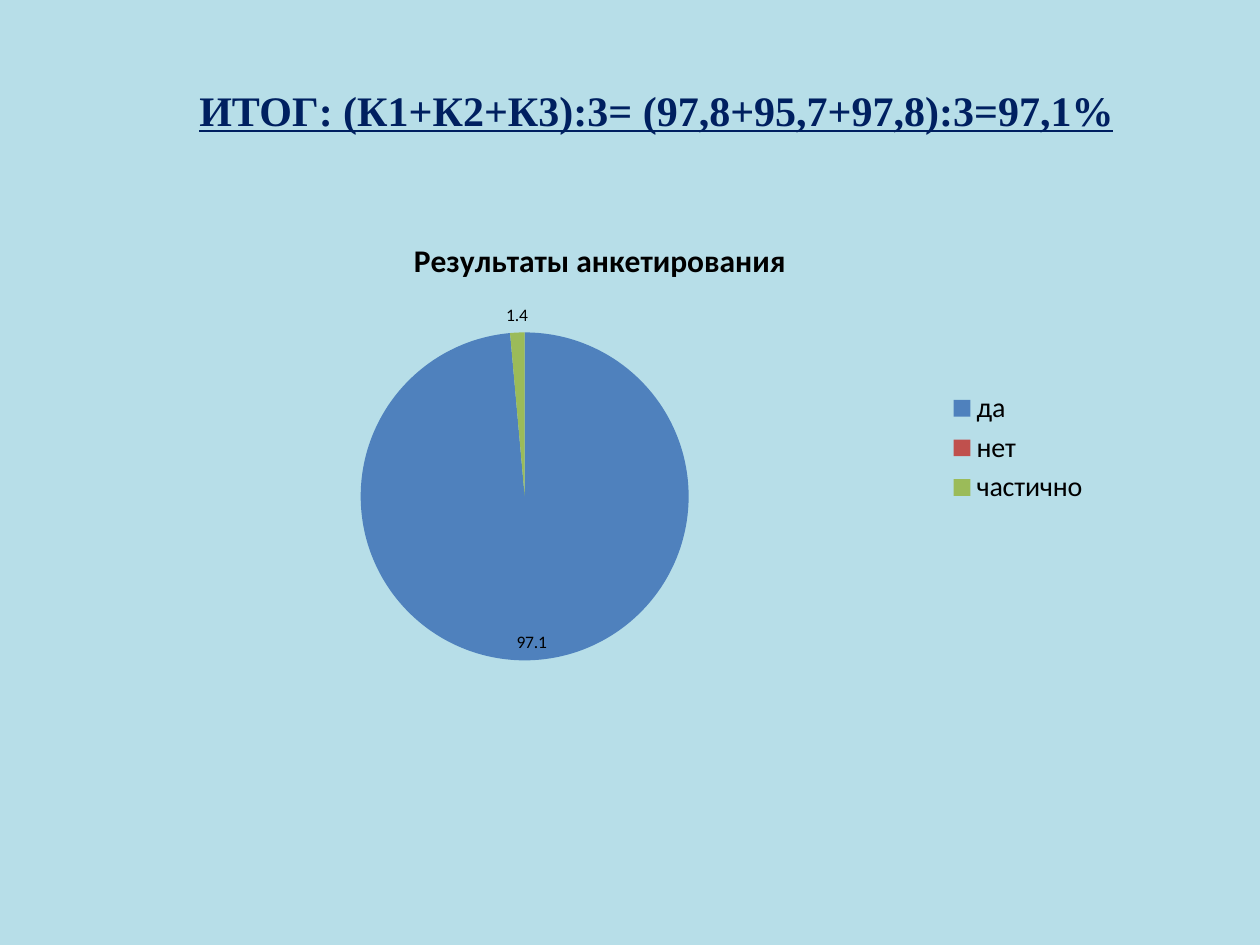
from dataclasses import dataclass

from lxml.etree import SubElement
from pptx import Presentation
from pptx.chart.data import CategoryChartData
from pptx.dml.color import RGBColor
from pptx.enum.chart import XL_CHART_TYPE as ChartType
from pptx.enum.chart import XL_LABEL_POSITION as LabelPosition
from pptx.enum.chart import XL_LEGEND_POSITION as LegendPosition
from pptx.enum.text import MSO_ANCHOR as Anchor
from pptx.enum.text import PP_ALIGN as Align
from pptx.oxml.ns import qn
from pptx.util import Inches, Pt

PX = Inches(1) // 126


@dataclass(frozen=True)
class Theme:
    background: str = "B7DEE8"
    heading: str = "002060"
    text: str = "000000"
    slices: tuple = ("4F81BD", "C0504D", "9BBB59")
    heading_face: str = "Times New Roman"
    chart_face: str = "Calibri"
    heading_size: int = 24
    chart_title_size: int = 18
    legend_size: int = 16
    label_size: int = 10


THEME = Theme()
ANSWERS = {"да": 97.1, "нет": 0, "частично": 1.4}


def px(*lengths):
    return [length * PX for length in lengths]


def set_font(font, face, size, color, bold=False):
    font.name = face
    font.size = Pt(size)
    font.bold = bold
    font.color.rgb = RGBColor.from_string(color)


def add_heading(page, text, place):
    frame = page.shapes.add_textbox(*px(*place)).text_frame
    frame.word_wrap = True
    frame.vertical_anchor = Anchor.TOP
    para = frame.paragraphs[0]
    para.text = text
    para.alignment = Align.CENTER
    set_font(para.font, THEME.heading_face, THEME.heading_size, THEME.heading, bold=True)
    para.font.underline = True


def place_plot(chart, **fractions):
    """Fix the inner plot area, in fractions of the chart frame."""
    plot_area = chart.plots[0]._element.getparent()
    layout = plot_area.find(qn("c:layout"))
    if layout is None:
        layout = SubElement(plot_area, qn("c:layout"))
        plot_area.insert(0, layout)
    manual = SubElement(layout, qn("c:manualLayout"))
    settings = {"layoutTarget": "inner", "xMode": "edge", "yMode": "edge", **fractions}
    for name, value in settings.items():
        SubElement(manual, qn(f"c:{name}")).set("val", str(value))


def add_pie(page, title, answers, place):
    chart_data = CategoryChartData()
    chart_data.categories = list(answers)
    chart_data.add_series(title, list(answers.values()))
    chart = page.shapes.add_chart(ChartType.PIE, *px(*place), chart_data).chart
    set_font(chart.font, THEME.chart_face, THEME.label_size, THEME.text)

    chart.has_title = True
    para = chart.chart_title.text_frame.paragraphs[0]
    para.text = title
    set_font(para.font, THEME.chart_face, THEME.chart_title_size, THEME.text, bold=True)
    chart.chart_title.include_in_layout = False

    chart.has_legend = True
    chart.legend.position = LegendPosition.RIGHT
    chart.legend.include_in_layout = False
    set_font(chart.legend.font, THEME.chart_face, THEME.legend_size, THEME.text)

    plot = chart.plots[0]
    plot.vary_by_categories = True
    plot.has_data_labels = True
    labels = plot.data_labels
    labels.show_value = True
    labels.show_percentage = False
    labels.number_format = "General;;"  # zero stays unlabelled
    labels.number_format_is_linked = False
    set_font(labels.font, THEME.chart_face, THEME.label_size, THEME.text)

    points = plot.series[0].points
    for index, (value, color) in enumerate(zip(answers.values(), THEME.slices)):
        fill = points[index].format.fill
        fill.solid()
        fill.fore_color.rgb = RGBColor.from_string(color)
        if value:
            large = value > 50
            points[index].data_label.position = (
                LabelPosition.INSIDE_END if large else LabelPosition.OUTSIDE_END)
    place_plot(chart, x=0.26, y=0.25, w=0.33, h=0.71)


def main():
    deck = Presentation()
    deck.slide_width, deck.slide_height = px(1260, 945)
    page = deck.slides.add_slide(deck.slide_layouts[6])
    background = page.background.fill
    background.solid()
    background.fore_color.rgb = RGBColor.from_string(THEME.background)
    add_heading(page, "ИТОГ: (К1+К2+К3):3= (97,8+95,7+97,8):3=97,1%", (78, 78, 1157, 106))
    add_pie(page, "Результаты анкетирования", ANSWERS, (98, 217, 1004, 462))
    deck.save("out.pptx")


if __name__ == "__main__":
    main()
